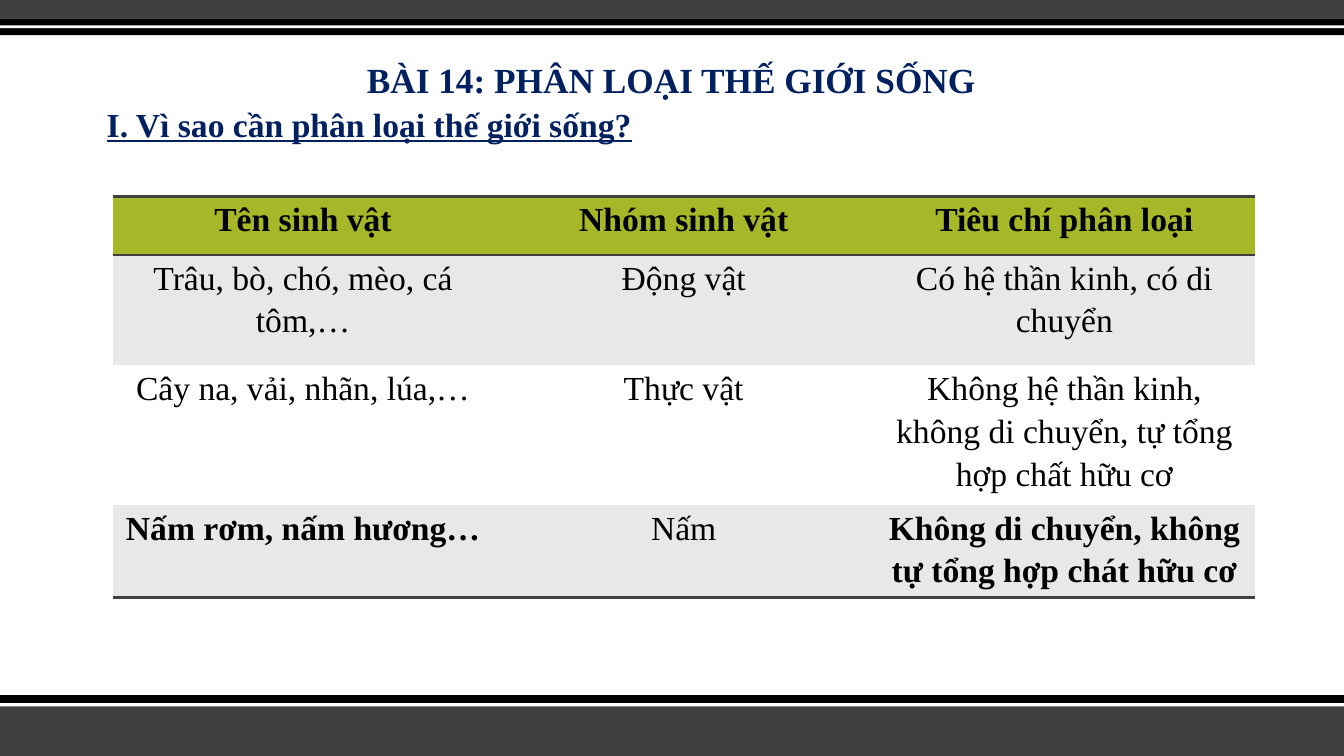
"""Builds a lesson slide on why living things are classified."""
from dataclasses import dataclass

from pptx import Presentation
from pptx.dml.color import RGBColor
from pptx.enum import shapes, text
from pptx.oxml import ns, parse_xml
from pptx.util import Cm, Pt

BLACK = RGBColor(0x00, 0x00, 0x00)
WHITE = RGBColor(0xFF, 0xFF, 0xFF)
CHARCOAL = RGBColor(0x40, 0x40, 0x40)
NAVY = RGBColor(0x00, 0x20, 0x60)
OLIVE = RGBColor(0xA6, 0xB7, 0x27)
PALE_GREY = RGBColor(0xE8, 0xE8, 0xE8)

FONT = "Times New Roman"
SLIDE_WIDTH = Cm(33.87)
SLIDE_HEIGHT = Cm(19.05)
NO_STYLE_NO_GRID = "{2D5ABB26-0587-4C30-8999-92F81FD0307C}"


@dataclass
class Band:
    top: float
    height: float
    color: RGBColor


@dataclass
class Heading:
    wording: str
    left: float
    top: float
    width: float
    height: float
    size: float
    line_spacing: float
    align: text.PP_ALIGN
    anchor: text.MSO_ANCHOR
    underline: bool = False


@dataclass
class Row:
    height: float
    fill: RGBColor
    cells: tuple[str, str, str]
    bold: tuple[bool, bool, bool] = (False, False, False)
    borders: tuple[str, ...] = ()


BANDS = [
    Band(17.78, 1.27, CHARCOAL),
    Band(17.52, 0.27, BLACK),
    Band(17.72, 0.08, WHITE),
    Band(0, 0.48, CHARCOAL),
    Band(0.48, 0.41, BLACK),
    Band(0.64, 0.07, WHITE),
]

HEADINGS = [
    Heading("I. Vì sao cần phân loại thế giới sống?", 2.44, 2.6, 27.18, 1.6,
            24, 0.9, text.PP_ALIGN.LEFT, text.MSO_ANCHOR.TOP, underline=True),
    Heading("BÀI 14: PHÂN LOẠI THẾ GIỚI SỐNG", 4.22, 1.19, 25.4, 1.47,
            25.2, 1.14, text.PP_ALIGN.CENTER, text.MSO_ANCHOR.BOTTOM),
]

ROWS = [
    Row(1.47, OLIVE, ("Tên sinh vật", "Nhóm sinh vật", "Tiêu chí phân loại"),
        bold=(True, True, True), borders=("lnT", "lnB")),
    Row(2.79, PALE_GREY, ("Trâu, bò, chó, mèo, cá tôm,…", "Động vật",
                          "Có hệ thần kinh, có di chuyển")),
    Row(3.15, WHITE, ("Cây na, vải, nhãn, lúa,…", "Thực vật",
                      "Không hệ thần kinh, không di chuyển, tự tổng hợp chất hữu cơ")),
    Row(1.98, PALE_GREY, ("Nấm rơm, nấm hương…", "Nấm",
                          "Không di chuyển, không tự tổng hợp chát hữu cơ"),
        bold=(True, False, True), borders=("lnB",)),
]


def draw_band(slide, band: Band) -> None:
    stripe = slide.shapes.add_shape(shapes.MSO_SHAPE.RECTANGLE, 0, Cm(band.top),
                                    SLIDE_WIDTH, Cm(band.height))
    stripe.shadow.inherit = False
    stripe.fill.solid()
    stripe.fill.fore_color.rgb = band.color
    stripe.line.fill.background()


def write(paragraph, wording: str, size: float, color: RGBColor, bold: bool) -> None:
    paragraph.text = wording
    paragraph.font.name = FONT
    paragraph.font.size = Pt(size)
    paragraph.font.bold = bold
    paragraph.font.color.rgb = color


def draw_heading(slide, heading: Heading) -> None:
    box = slide.shapes.add_textbox(Cm(heading.left), Cm(heading.top),
                                   Cm(heading.width), Cm(heading.height))
    frame = box.text_frame
    frame.word_wrap = True
    frame.vertical_anchor = heading.anchor
    line = frame.paragraphs[0]
    write(line, heading.wording, heading.size, NAVY, True)
    line.font.underline = heading.underline
    line.alignment = heading.align
    line.line_spacing = heading.line_spacing


def add_border(cell, side: str) -> None:
    cell._tc.get_or_add_tcPr().append(parse_xml(
        f'<a:{side} {ns.nsdecls("a")} w="{Pt(2)}"><a:solidFill>'
        f'<a:srgbClr val="{CHARCOAL}"/></a:solidFill></a:{side}>'))


def fill_cell(cell, wording: str, bold: bool, row: Row) -> None:
    for side in row.borders:
        add_border(cell, side)
    cell.fill.solid()
    cell.fill.fore_color.rgb = row.fill
    cell.margin_left = cell.margin_right = Cm(0.18)
    cell.margin_top = cell.margin_bottom = 0
    entry = cell.text_frame.paragraphs[0]
    write(entry, wording, 24, BLACK, bold)
    entry.alignment = text.PP_ALIGN.CENTER
    entry.line_spacing = 1.15
    entry.space_before = Pt(6)


def draw_table(slide, rows: list[Row]) -> None:
    total_height = sum(row.height for row in rows)
    organisms = slide.shapes.add_table(len(rows), 3, Cm(2.84), Cm(4.95),
                                       Cm(28.78), Cm(total_height)).table
    organisms.first_row = organisms.horz_banding = False
    organisms._tbl.tblPr.find(ns.qn("a:tableStyleId")).text = NO_STYLE_NO_GRID
    for index, row in enumerate(rows):
        organisms.rows[index].height = Cm(row.height)
        for column, (wording, bold) in enumerate(zip(row.cells, row.bold)):
            fill_cell(organisms.cell(index, column), wording, bold, row)


def main() -> None:
    deck = Presentation()
    deck.slide_width = SLIDE_WIDTH
    deck.slide_height = SLIDE_HEIGHT
    slide = deck.slides.add_slide(deck.slide_layouts[6])
    for band in BANDS:
        draw_band(slide, band)
    for heading in HEADINGS:
        draw_heading(slide, heading)
    draw_table(slide, ROWS)
    deck.save("out.pptx")


if __name__ == "__main__":
    main()
